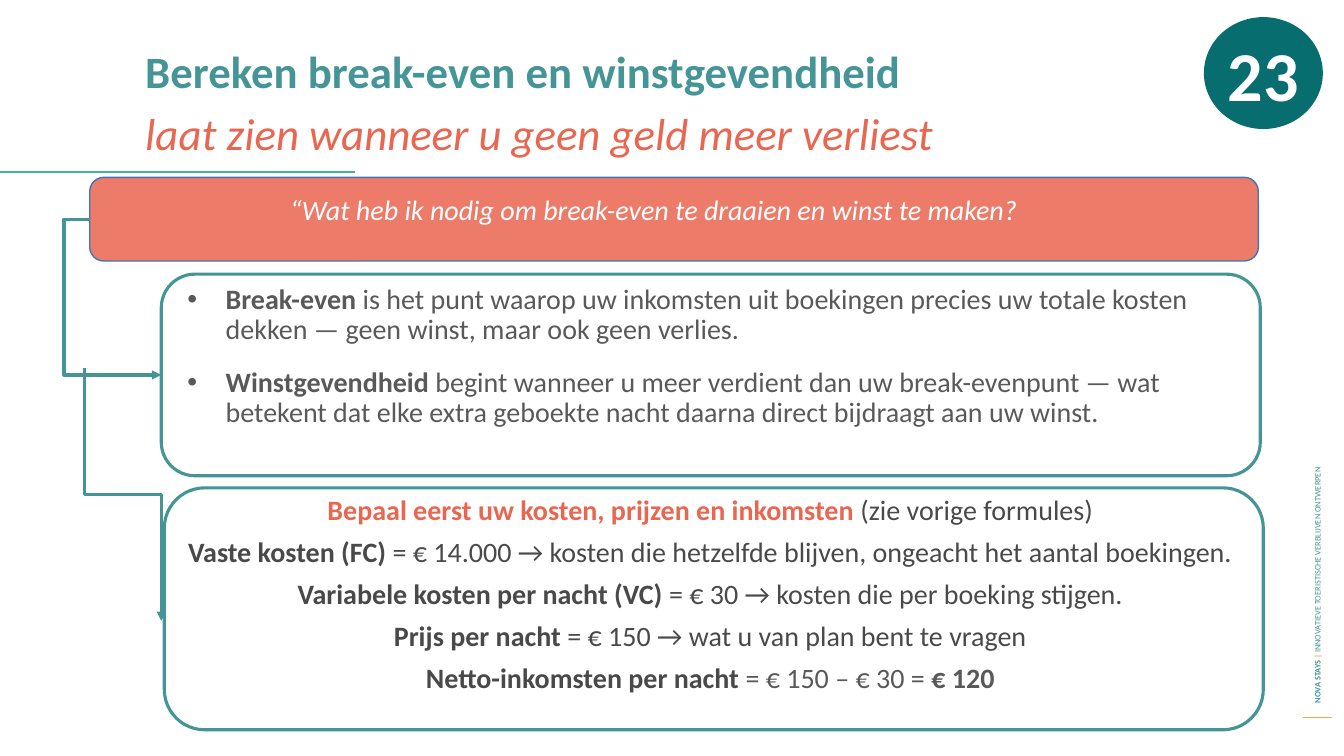
from dataclasses import dataclass

from lxml import etree
from pptx import Presentation
from pptx.dml.color import RGBColor
from pptx.enum.shapes import MSO_CONNECTOR as LINK, MSO_SHAPE as SHAPE
from pptx.enum.text import MSO_ANCHOR as ANCHOR, MSO_AUTO_SIZE as FIT, PP_ALIGN as ALIGN
from pptx.oxml.ns import qn
from pptx.util import Inches, Pt


@dataclass(frozen=True)
class Theme:
    font: str = "Calibri"
    teal: str = "459597"
    dark_teal: str = "086D6E"
    green: str = "3FB5A1"
    coral: str = "E96751"
    salmon: str = "EC7C69"
    blue: str = "4174BA"
    orange: str = "FBA63B"
    grey: str = "595959"
    dark_grey: str = "494949"
    white: str = "FFFFFF"
    badge_size: int = 50
    title_size: int = 32
    body_size: int = 20
    footer_size: int = 6


THEME = Theme()


def add_run(paragraph, text, size, color, bold=False, italic=False):
    run = paragraph.add_run()
    run.text = text
    font = run.font
    font.name, font.size, font.bold, font.italic = THEME.font, Pt(size), bold, italic
    font.color.rgb = RGBColor.from_string(color)


def write(frame, paragraphs, size, align=ALIGN.LEFT, before=0, after=0,
          spacing=1.0, bullet=False):
    """Fill a frame; each paragraph is a list of (text, color, style) runs."""
    frame.word_wrap = True
    for index, runs in enumerate(paragraphs):
        paragraph = frame.add_paragraph() if index else frame.paragraphs[0]
        paragraph.alignment = align
        paragraph.line_spacing = spacing
        paragraph.space_before = Pt(before if index else 0)
        paragraph.space_after = Pt(after)
        if bullet:
            properties = paragraph._p.get_or_add_pPr()
            properties.set("marL", str(Inches(0.38)))
            properties.set("indent", str(-Inches(0.38)))
            etree.SubElement(properties, qn("a:buFont")).set("typeface", "Arial")
            etree.SubElement(properties, qn("a:buChar")).set("char", "•")
        for text, color, style in runs:
            add_run(paragraph, text, size, color, "b" in style, "i" in style)


def add_text(slide, x, y, w, h, paragraphs, size, **layout):
    box = slide.shapes.add_textbox(Inches(x), Inches(y), Inches(w), Inches(h))
    write(box.text_frame, paragraphs, size, **layout)
    return box


def add_panel(slide, kind, x, y, w, h, fill=None, line=None, width=1.0):
    panel = slide.shapes.add_shape(kind, Inches(x), Inches(y), Inches(w), Inches(h))
    panel.shadow.inherit = False
    if fill:
        panel.fill.solid()
        panel.fill.fore_color.rgb = RGBColor.from_string(fill)
    else:
        panel.fill.background()
    if line:
        panel.line.color.rgb = RGBColor.from_string(line)
        panel.line.width = Pt(width)
    else:
        panel.line.fill.background()
    return panel


def add_line(slide, kind, x1, y1, x2, y2, color, width):
    line = slide.shapes.add_connector(kind, Inches(x1), Inches(y1), Inches(x2), Inches(y2))
    line.line.color.rgb = RGBColor.from_string(color)
    line.line.width = Pt(width)
    etree.SubElement(line._element.spPr, qn("a:effectLst"))
    return line


def add_elbow_arrow(slide, x1, y1, x2, y2, bend):
    """Elbow arrow; bend is the position of the middle leg as a share of the length."""
    arrow = add_line(slide, LINK.ELBOW, x1, y1, x2, y2, THEME.teal, 2.25)
    properties = arrow._element.spPr
    adjustments = properties.find(qn("a:prstGeom")).get_or_add_avLst()
    guide = etree.SubElement(adjustments, qn("a:gd"))
    guide.set("name", "adj1")
    guide.set("fmla", f"val {round(bend * 100000)}")
    etree.SubElement(properties.find(qn("a:ln")), qn("a:tailEnd")).set("type", "triangle")
    return arrow


def add_downward_elbow(slide, x1, y1, x2, y2):
    """Elbow arrow that leaves and arrives vertically: a flipped elbow turned by 270°."""
    center_x, center_y = (x1 + x2) / 2, (y1 + y2) / 2
    half_run, half_rise = (y2 - y1) / 2, (x2 - x1) / 2
    arrow = add_elbow_arrow(slide, center_x + half_run, center_y - half_rise,
                            center_x - half_run, center_y + half_rise, 0.5)
    arrow._element.spPr.find(qn("a:xfrm")).set("rot", str(270 * 60000))


def add_title(slide):
    title = slide.shapes.title
    title.left, title.top = Inches(1.34), Inches(0.44)
    title.width, title.height = Inches(11.61), Inches(0.88)
    frame = title.text_frame
    frame.auto_size = FIT.NONE
    frame.vertical_anchor = ANCHOR.TOP
    write(frame, [
        [("Bereken break-even en winstgevendheid", THEME.teal, "b")],
        [("laat zien wanneer u geen geld meer verliest", THEME.coral, "i")],
    ], THEME.title_size, before=10, spacing=0.9)


def add_footer(slide):
    add_line(slide, LINK.STRAIGHT, 12.92, 7.12, 13.21, 7.12, THEME.orange, 0.75)
    footer = add_text(slide, 10.18, 4.09, 5.77, 0.2, [[
        ("NOVA STAYS ", THEME.teal, "b"),
        ("| ", THEME.orange, "b"),
        ("INNOVATIEVE TOERISTISCHE VERBLIJVEN ONTWERPEN", THEME.teal, ""),
    ]], THEME.footer_size)
    footer.rotation = 270
    footer.text_frame.vertical_anchor = ANCHOR.MIDDLE


def add_badge(slide):
    badge = add_panel(slide, SHAPE.OVAL, 11.94, 0.17, 1.18, 1.11, THEME.dark_teal)
    frame = badge.text_frame
    write(frame, [[("23", THEME.white, "b")]], THEME.badge_size, align=ALIGN.CENTER)
    frame.vertical_anchor = ANCHOR.MIDDLE
    frame.word_wrap = False


def main():
    deck = Presentation()
    deck.slide_width, deck.slide_height = Inches(13.33), Inches(7.5)
    slide = deck.slides.add_slide(deck.slide_layouts[5])
    rounded = SHAPE.FLOWCHART_ALTERNATE_PROCESS
    grey, dark = THEME.grey, THEME.dark_grey

    # Header
    add_footer(slide)
    add_title(slide)
    add_line(slide, LINK.STRAIGHT, 0, 1.71, 3.52, 1.71, THEME.green, 1.5)
    add_badge(slide)

    # Question
    question = add_panel(slide, rounded, 0.89, 1.76, 11.59, 0.83, THEME.salmon, THEME.blue)
    add_text(slide, 1.49, 1.9, 9.99, 0.88, [[
        ("“Wat heb ik nodig om break-even te draaien en winst te maken?", THEME.white, "i"),
    ]], THEME.body_size, align=ALIGN.CENTER, after=6, spacing=0.9)

    # Definitions
    definitions = add_panel(slide, rounded, 1.6, 2.72, 10.9, 2, line=THEME.teal, width=2.25)
    add_text(slide, 1.76, 2.78, 10.76, 0.88, [
        [("Break-even ", grey, "b"),
         ("is het punt waarop uw inkomsten uit boekingen precies uw totale kosten "
          "dekken — geen winst, maar ook geen verlies.", grey, "")],
        [("Winstgevendheid ", grey, "b"),
         ("begint wanneer u meer verdient dan uw break-evenpunt — wat betekent dat "
          "elke extra geboekte nacht daarna direct bijdraagt aan uw winst.", grey, "")],
    ], THEME.body_size, before=10, after=6, spacing=0.9, bullet=True)

    # Costs, prices and income
    add_panel(slide, rounded, 1.63, 4.84, 10.9, 2.4, line=THEME.teal, width=2.25)
    add_text(slide, 1.73, 4.84, 10.63, 0.88, [
        [("Bepaal eerst uw kosten, prijzen en inkomsten ", THEME.coral, "b"),
         ("(zie vorige formules)", dark, "")],
        [("Vaste kosten (FC) ", dark, "b"),
         ("= € 14.000 → kosten die hetzelfde blijven, ongeacht het aantal boekingen.", dark, "")],
        [("Variabele kosten per nacht (VC) ", dark, "b"),
         ("= € 30 → kosten die per boeking stijgen.", dark, "")],
        [("Prijs per nacht ", dark, "b"),
         ("= € 150 → wat u van plan bent te vragen", dark, "")],
        [("Netto-inkomsten per nacht ", dark, "b"),
         ("= € 150 – € 30 = ", grey, ""),
         ("€ 120", grey, "b")],
    ], THEME.body_size, align=ALIGN.CENTER, after=6)

    # Arrows
    to_definitions = add_elbow_arrow(slide, 0.89, 2.17, 1.6, 3.72, -0.36)
    to_definitions.begin_connect(question, 1)
    to_definitions.end_connect(definitions, 1)
    add_downward_elbow(slide, 0.84, 3.65, 1.6, 6.16)

    deck.save("out.pptx")


if __name__ == "__main__":
    main()
